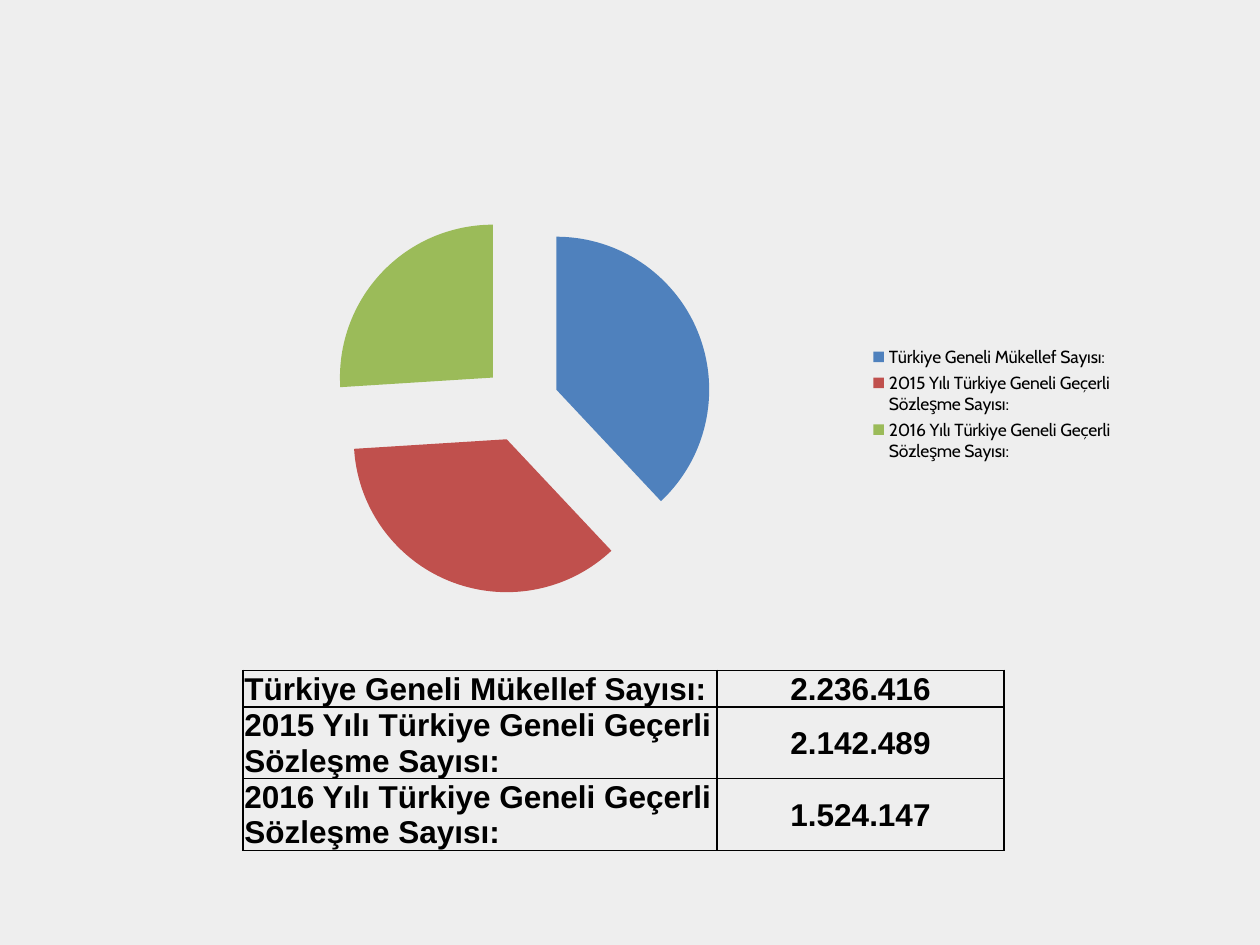
from dataclasses import dataclass

from lxml.etree import SubElement
from pptx import Presentation
from pptx.chart.data import CategoryChartData
from pptx.dml.color import RGBColor
from pptx.enum.chart import XL_CHART_TYPE, XL_LEGEND_POSITION
from pptx.enum.text import MSO_ANCHOR, PP_ALIGN
from pptx.oxml import parse_xml
from pptx.oxml.ns import nsdecls, qn
from pptx.util import Inches, Pt


@dataclass(frozen=True)
class Theme:
    background: RGBColor = RGBColor(0xEE, 0xEE, 0xEE)
    ink: RGBColor = RGBColor(0, 0, 0)
    slices: tuple = ("4F81BD", "C0504D", "9BBB59")
    table_font: str = "Arial"
    table_size: Pt = Pt(18)
    legend_font: str = "Cabin"
    legend_size: Pt = Pt(10)
    border: Pt = Pt(1)


THEME = Theme()
WIDTH, HEIGHT = Inches(10), Inches(7.5)
LINE_HEIGHT = Inches(0.285)
COLUMN_WIDTHS = (Inches(3.76), Inches(2.28))

# label, count, share of the pie, lines the label takes in the table
CONTRACT_COUNTS = (
    ("Türkiye Geneli Mükellef Sayısı:", "2.236.416", 38, 1),
    ("2015 Yılı Türkiye Geneli Geçerli Sözleşme Sayısı:", "2.142.489", 36, 2),
    ("2016 Yılı Türkiye Geneli Geçerli Sözleşme Sayısı:", "1.524.147", 26, 2),
)


def explode(series, percent):
    """Move every slice outward; the element must precede the points."""
    explosion = parse_xml(f'<c:explosion {nsdecls("c")} val="{percent}"/>')
    series._element.find(qn("c:dPt")).addprevious(explosion)


def add_share_pie(slide):
    shares = CategoryChartData()
    shares.categories = [label for label, *_ in CONTRACT_COUNTS]
    shares.add_series("Series 1", [share for _, _, share, _ in CONTRACT_COUNTS])
    pie = slide.shapes.add_chart(
        XL_CHART_TYPE.PIE, Inches(1.38), Inches(1.55), Inches(7.56), Inches(3.31), shares
    ).chart
    pie.has_title = False
    pie.font.name = THEME.legend_font
    pie.font.size = THEME.legend_size
    pie.font.color.rgb = THEME.ink
    pie.has_legend = True
    pie.legend.position = XL_LEGEND_POSITION.RIGHT
    pie.legend.include_in_layout = False

    plot = pie.plots[0]
    plot.vary_by_categories = True
    series = plot.series[0]
    for index, colour in enumerate(THEME.slices):
        fill = series.points[index].format.fill
        fill.solid()
        fill.fore_color.rgb = RGBColor.from_string(colour)
    explode(series, 25)


def add_borders(cell):
    """Draw all four edges; they must precede the cell's fill."""
    properties = cell._tc.get_or_add_tcPr()
    for position, edge in enumerate(("a:lnL", "a:lnR", "a:lnT", "a:lnB")):
        line = SubElement(properties, qn(edge), w=str(THEME.border))
        colour = SubElement(line, qn("a:solidFill"))
        SubElement(colour, qn("a:srgbClr"), val=str(THEME.ink))
        properties.insert(position, line)


def fill_cell(cell, text, alignment):
    cell.text = text
    cell.vertical_anchor = MSO_ANCHOR.MIDDLE
    cell.margin_left = cell.margin_right = cell.margin_top = Inches(0.01)
    cell.margin_bottom = 0
    add_borders(cell)
    cell.fill.background()
    paragraph = cell.text_frame.paragraphs[0]
    paragraph.alignment = alignment
    paragraph.font.name = THEME.table_font
    paragraph.font.size = THEME.table_size
    paragraph.font.bold = True
    paragraph.font.color.rgb = THEME.ink


def add_count_table(slide):
    total_lines = sum(lines for *_, lines in CONTRACT_COUNTS)
    table = slide.shapes.add_table(
        len(CONTRACT_COUNTS), len(COLUMN_WIDTHS), Inches(1.93), Inches(5.32),
        sum(COLUMN_WIDTHS), LINE_HEIGHT * total_lines,
    ).table
    table.first_row = table.horz_banding = False
    for column, width in zip(table.columns, COLUMN_WIDTHS):
        column.width = width
    for row, (label, count, _, lines) in zip(table.rows, CONTRACT_COUNTS):
        row.height = LINE_HEIGHT * lines
        fill_cell(row.cells[0], label, PP_ALIGN.LEFT)
        fill_cell(row.cells[1], count, PP_ALIGN.CENTER)


def main():
    presentation = Presentation()
    presentation.slide_width, presentation.slide_height = WIDTH, HEIGHT
    slide = presentation.slides.add_slide(presentation.slide_layouts[6])
    slide.background.fill.solid()
    slide.background.fill.fore_color.rgb = THEME.background
    add_count_table(slide)
    add_share_pie(slide)
    presentation.save("out.pptx")


if __name__ == "__main__":
    main()
